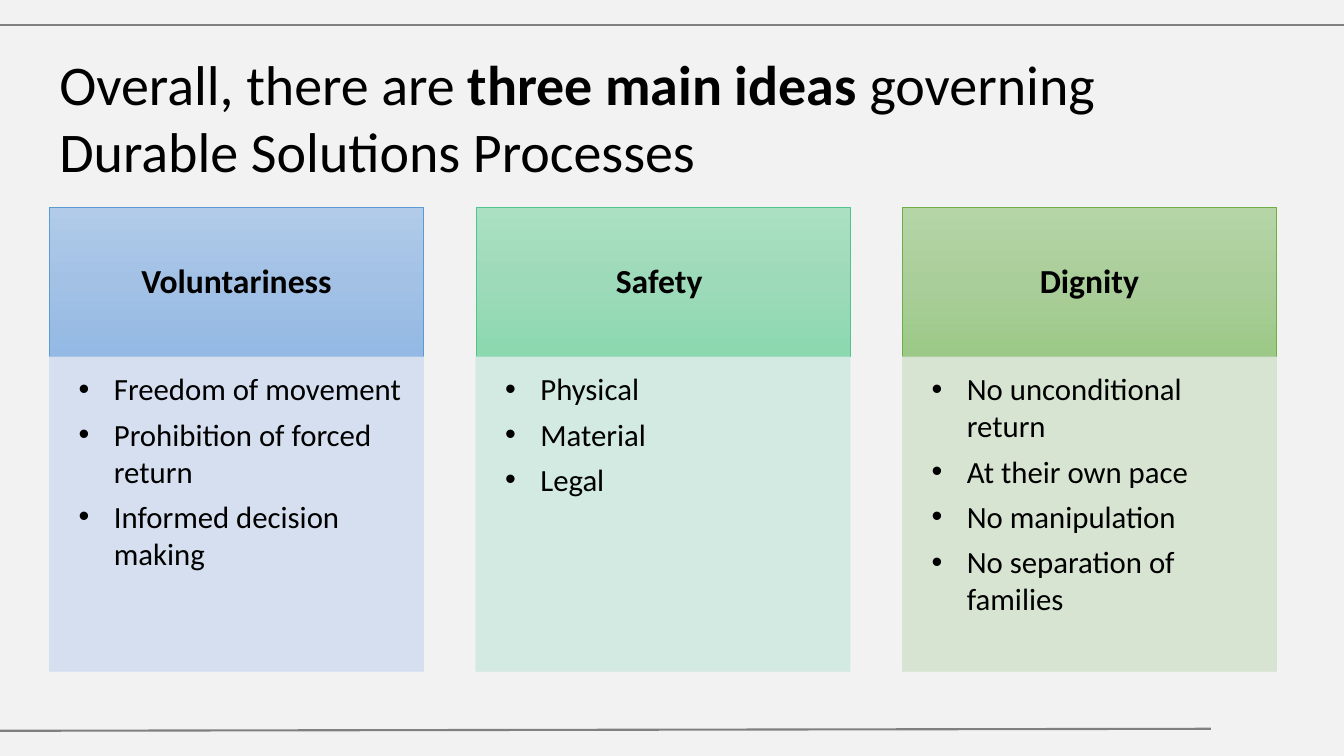
from copy import deepcopy

from lxml.etree import SubElement
from pptx import Presentation
from pptx.dml.color import RGBColor
from pptx.enum.shapes import MSO_CONNECTOR, MSO_SHAPE
from pptx.enum.text import MSO_ANCHOR as Anchor, PP_ALIGN as Align
from pptx.oxml.ns import qn
from pptx.util import Pt

PX = 9144  # 100 px to the inch
FONT = "Calibri"
COLOURS = {"background": "F2F2F2", "rule": "808080", "text": "000000"}

IDEAS = [
    {"title": "Voluntariness", "shades": ["B1CBE9", "A3C1E5", "93B9E4"],
     "edge": "5B9BD5", "tint": "D2DEEF",
     "points": ["Freedom of movement", "Prohibition of forced return",
                "Informed decision making"]},
    {"title": "Safety ", "shades": ["ABE0C3", "9DDAB9", "8CD8AF"],
     "edge": "4DC58D", "tint": "D0EAE1",
     "points": ["Physical", "Material", "Legal"]},
    {"title": "Dignity", "shades": ["B5D5A7", "AACE9A", "9CC987"],
     "edge": "70AD47", "tint": "D5E3CF",
     "points": ["No unconditional return", "At their own pace",
                "No manipulation", "No separation of families"]},
]


def rgb(value):
    return RGBColor.from_string(value)


class Deck:
    def __init__(self, width, height):
        self.deck = Presentation()
        self.deck.slide_width, self.deck.slide_height = width * PX, height * PX
        self.slide = self.deck.slides.add_slide(self.deck.slide_layouts[6])
        background = self.slide.background.fill
        background.solid()
        background.fore_color.rgb = rgb(COLOURS["background"])

    def style(self, paragraph, size, bold=None):
        font = paragraph.font
        font.name, font.size, font.bold = FONT, Pt(size), bold
        font.color.rgb = rgb(COLOURS["text"])

    def rule(self, *ends):
        line = self.slide.shapes.add_connector(
            MSO_CONNECTOR.STRAIGHT, *[end * PX for end in ends])
        line.line.color.rgb = rgb(COLOURS["rule"])
        line.line.width = Pt(1.5)
        SubElement(line._element.spPr, qn("a:effectLst"))

    def heading(self, box, runs):
        frame = self.slide.shapes.add_textbox(*[side * PX for side in box]).text_frame
        frame.word_wrap = True
        paragraph = frame.paragraphs[0]
        self.style(paragraph, 40)
        for text, bold in runs:
            run = paragraph.add_run()
            run.text, run.font.bold = text, bold

    def panel(self, box, edge, insets, anchor):
        panel = self.slide.shapes.add_shape(
            MSO_SHAPE.RECTANGLE, *[side * PX for side in box])
        panel.shadow.inherit = False
        panel.line.color.rgb = rgb(edge)
        panel.line.width = Pt(0.5)
        frame = panel.text_frame
        frame.word_wrap, frame.vertical_anchor = True, anchor
        (frame.margin_left, frame.margin_top,
         frame.margin_right, frame.margin_bottom) = [inset * PX for inset in insets]
        return panel

    def header(self, box, title, shades, edge):
        panel = self.panel(box, edge, (19, 11, 19, 11), Anchor.MIDDLE)
        panel.fill.gradient()
        panel.fill.gradient_angle = 270
        # The default gradient has two stops; add a middle one
        stops = panel._element.spPr.find(".//" + qn("a:gsLst"))
        stops.insert(1, deepcopy(stops[0]))
        for stop, position, shade in zip(panel.fill.gradient_stops, (0, 0.5, 1), shades):
            stop.position, stop.color.rgb = position, rgb(shade)
        paragraph = panel.text_frame.paragraphs[0]
        paragraph.text = title
        paragraph.alignment, paragraph.line_spacing = Align.CENTER, 0.9
        self.style(paragraph, 24, True)

    def bullets(self, box, points, tint):
        panel = self.panel(box, tint, (13, 13, 17, 19), Anchor.TOP)
        panel.fill.solid()
        panel.fill.fore_color.rgb = rgb(tint)
        # Fill and outline are 90% opaque
        for colour in panel._element.spPr.iter(qn("a:srgbClr")):
            SubElement(colour, qn("a:alpha"), val="90000")
        frame = panel.text_frame
        for index, point in enumerate(points):
            paragraph = frame.add_paragraph() if index else frame.paragraphs[0]
            paragraph.text = point
            paragraph.alignment, paragraph.space_after = Align.LEFT, Pt(6)
            properties = paragraph._p.get_or_add_pPr()
            properties.set("marL", str(51 * PX))
            properties.set("indent", str(-35 * PX))
            SubElement(properties, qn("a:buFont"), typeface="Arial")
            SubElement(properties, qn("a:buChar"), char="•")
            self.style(paragraph, 22)


def main():
    deck = Deck(1333, 750)

    # Rules at top and bottom
    deck.rule(0, 25, 1333, 25)
    deck.rule(0, 725, 1201, 723)

    # One column per idea
    left, top, width, pitch = 49, 206, 371, 423
    header_height, body_height = 148, 312
    for column, idea in enumerate(IDEAS):
        x = left + column * pitch
        deck.header((x, top, width, header_height),
                    idea["title"], idea["shades"], idea["edge"])
        deck.bullets((x, top + header_height, width, body_height),
                     idea["points"], idea["tint"])

    # Title
    deck.heading((left, 44, 1151, 145), [
        ("Overall, there are ", False),
        ("three main ideas ", True),
        ("governing Durable Solutions Processes", False),
    ])
    deck.deck.save("out.pptx")


if __name__ == "__main__":
    main()
